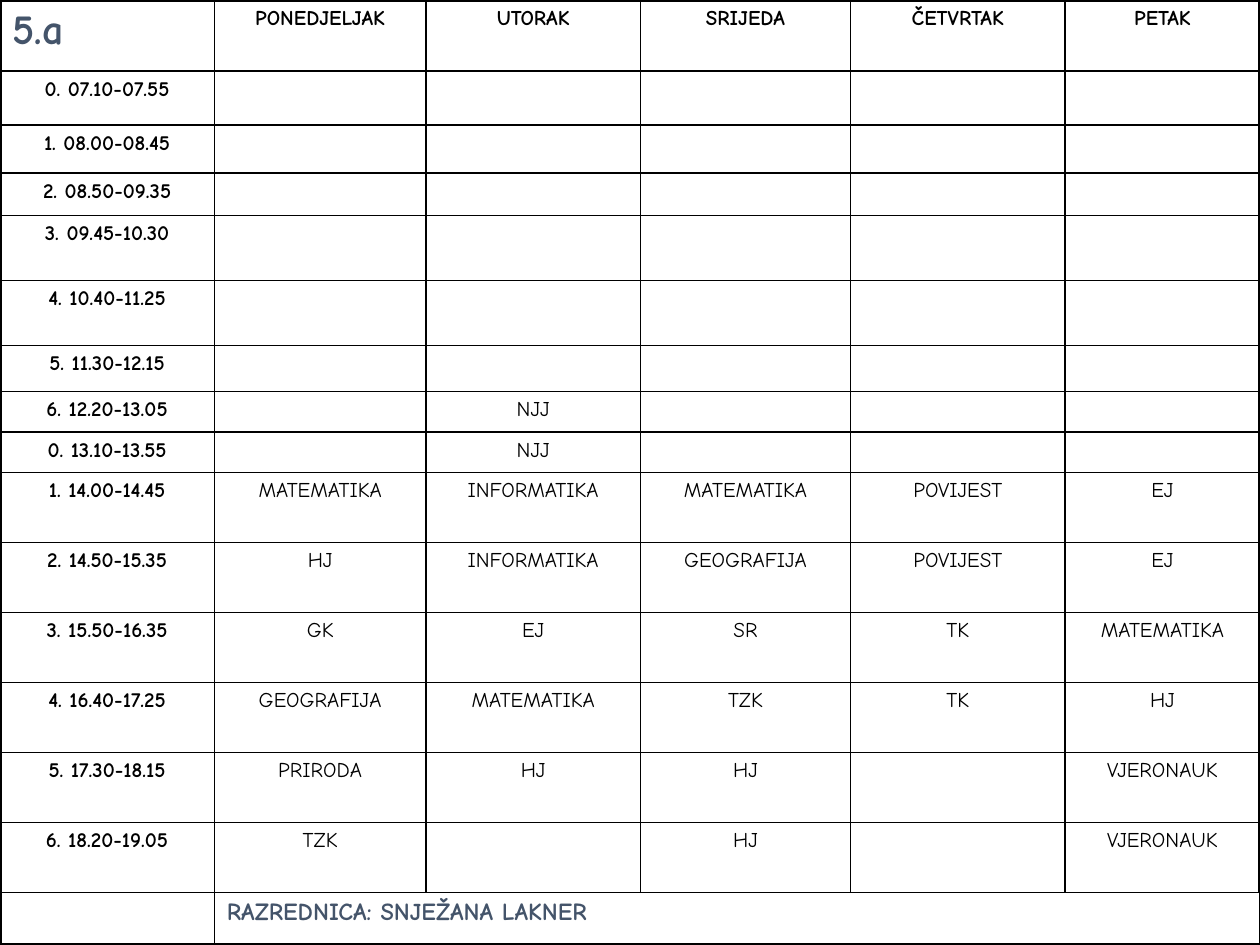
from lxml.etree import SubElement
from pptx import Presentation
from pptx.dml.color import RGBColor
from pptx.enum.text import PP_ALIGN
from pptx.oxml.ns import qn
from pptx.util import Cm, Pt

FONT = "Comic Neue"
BLACK = "000000"
SLATE = "44546A"
WIDTHS = [4.32, 4.27, 4.32, 4.24, 4.32, 3.93]
HEIGHTS = [1.43, 1.09, 0.97, 0.85, 1.31, 1.31, 0.93, 0.82, 0.82] + [1.41] * 6 + [1.06]
DAYS = ["PONEDJELJAK", "UTORAK", "SRIJEDA", "ČETVRTAK", "PETAK"]
HOURS = [
    ("0. 07.10-07.55", []),
    ("1. 08.00-08.45", []),
    ("2. 08.50-09.35", []),
    ("3. 09.45-10.30", []),
    ("4. 10.40-11.25", []),
    ("5. 11.30-12.15", []),
    ("6. 12.20-13.05", ["", "NJJ"]),
    ("0. 13.10-13.55", ["", "NJJ"]),
    ("1. 14.00-14.45", ["MATEMATIKA", "INFORMATIKA", "MATEMATIKA", "POVIJEST", "EJ"]),
    ("2. 14.50-15.35", ["HJ", "INFORMATIKA", "GEOGRAFIJA", "POVIJEST", "EJ"]),
    ("3. 15.50-16.35", ["GK", "EJ", "SR", "TK", "MATEMATIKA"]),
    ("4. 16.40-17.25", ["GEOGRAFIJA", "MATEMATIKA", "TZK", "TK", "HJ"]),
    ("5. 17.30-18.15", ["PRIRODA", "HJ", "HJ", "", "VJERONAUK"]),
    ("6. 18.20-19.05", ["TZK", "", "HJ", "", "VJERONAUK"]),
]


def color(code):
    return RGBColor.from_string(code)


def write(cell, text, size=12, code=BLACK, bold=True, align=PP_ALIGN.CENTER):
    para = cell.text_frame.paragraphs[0]
    para.alignment = align
    if not text:
        SubElement(para._p, qn("a:endParaRPr"), sz=str(size * 100))
        return
    run = para.add_run()
    run.text = text
    font = run.font
    font.name = FONT
    font.size = Pt(size)
    font.bold = bold
    font.color.rgb = color(code)


def border(cell, sides):
    props = cell._tc.get_or_add_tcPr()
    for side, outer in sides.items():
        width = Pt(2.25 if outer else 1)
        line = SubElement(props, qn(f"a:ln{side}"), w=str(width))
        fill = SubElement(line, qn("a:solidFill"))
        SubElement(fill, qn("a:srgbClr"), val=BLACK)


def add_grid(slide):
    rows, cols = len(HEIGHTS), len(WIDTHS)
    frame = slide.shapes.add_table(
        rows, cols, Cm(0), Cm(0), Cm(sum(WIDTHS)), Cm(sum(HEIGHTS))
    )
    table = frame.table
    table.first_row = False
    table.horz_banding = False
    for col, width in zip(table.columns, WIDTHS):
        col.width = Cm(width)
    for row, height in zip(table.rows, HEIGHTS):
        row.height = Cm(height)
    for y in range(rows):
        for x in range(cols):
            cell = table.cell(y, x)
            border(cell, {"L": x == 0, "R": x == cols - 1,
                          "T": y == 0, "B": y == rows - 1})
            cell.fill.background()
    return table


def fill_days(table):
    write(table.cell(0, 0), "5.a", 24, SLATE, align=PP_ALIGN.LEFT)
    for x, day in enumerate(DAYS, 1):
        write(table.cell(0, x), day)


def fill_hours(table):
    for y, (time, tasks) in enumerate(HOURS, 1):
        write(table.cell(y, 0), time)
        for x in range(len(DAYS)):
            task = tasks[x] if x < len(tasks) else ""
            write(table.cell(y, x + 1), task, bold=False)


def fill_foot(table):
    last = len(HEIGHTS) - 1
    write(table.cell(last, 0), "")
    foot = table.cell(last, 1)
    foot.merge(table.cell(last, len(DAYS)))
    write(foot, "RAZREDNICA: SNJEŽANA LAKNER", 14, SLATE, align=PP_ALIGN.LEFT)


def main():
    deck = Presentation()
    deck.slide_width = Cm(25.4)
    deck.slide_height = Cm(19.05)
    slide = deck.slides.add_slide(deck.slide_layouts[6])
    table = add_grid(slide)
    fill_days(table)
    fill_hours(table)
    fill_foot(table)
    deck.save("out.pptx")


if __name__ == "__main__":
    main()
